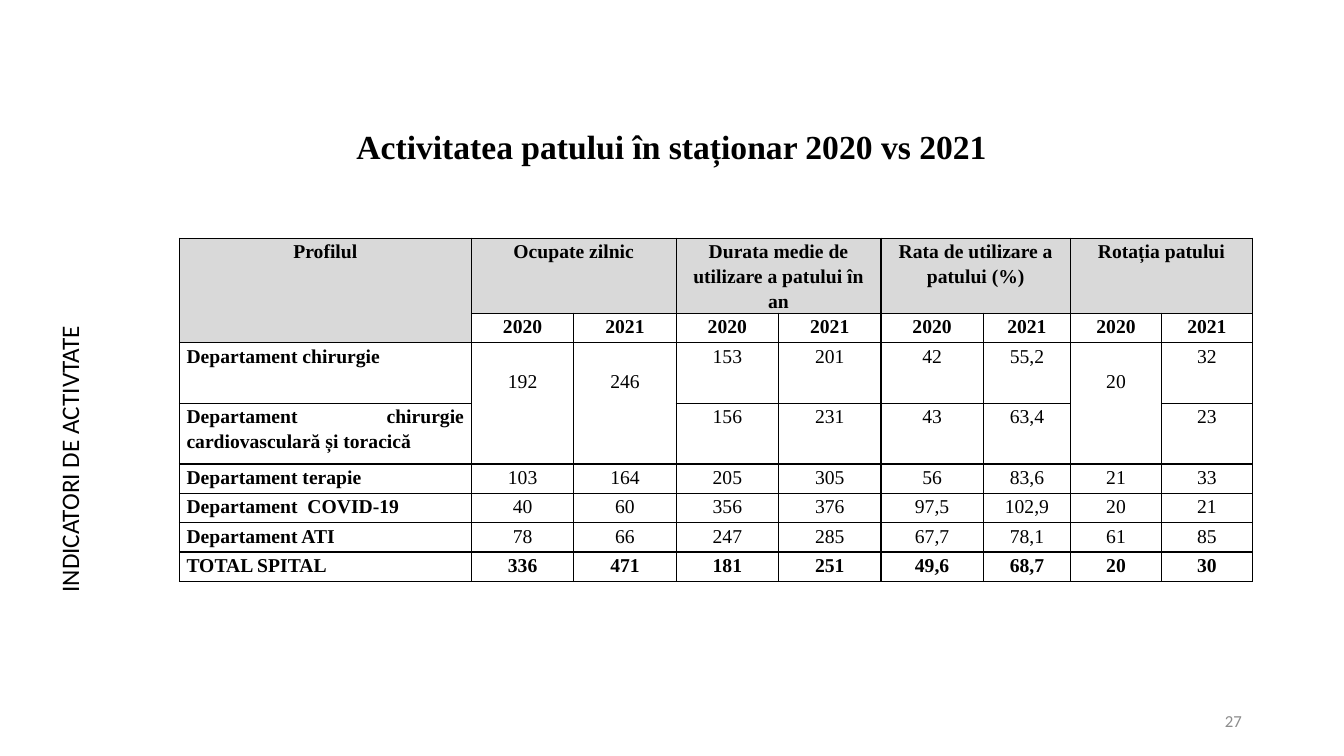
from lxml import etree
from pptx import Presentation
from pptx.dml.color import RGBColor
from pptx.enum.text import MSO_ANCHOR, PP_ALIGN
from pptx.oxml.ns import qn
from pptx.util import Cm, Pt

LEFT, CENTER = PP_ALIGN.LEFT, PP_ALIGN.CENTER
RIGHT, JUSTIFY = PP_ALIGN.RIGHT, PP_ALIGN.JUSTIFY
MIDDLE = MSO_ANCHOR.MIDDLE

SERIF, SANS = "Times New Roman", "Calibri"
BLACK, WHITE, GREY, MUTED = "000000", "FFFFFF", "D9D9D9", "8C8C8C"

WIDTHS = [7.36] + [2.58] * 5 + [2.2, 2.29, 2.29]
HEIGHTS = [1.89, 0.74, 1.53, 1.53] + [0.74] * 4
ROWS = [
    ["Profilul", "Ocupate zilnic", "", "Durata medie de utilizare a patului în an",
     "", "Rata de utilizare a patului (%)", "", "Rotația patului", ""],
    [""] + ["2020", "2021"] * 4,
    ["Departament chirurgie", "192", "246", "153", "201", "42", "55,2", "20", "32"],
    ["Departament chirurgie cardiovasculară și toracică",
     "", "", "156", "231", "43", "63,4", "", "23"],
    ["Departament terapie", "103", "164", "205", "305", "56", "83,6", "21", "33"],
    ["Departament  COVID-19", "40", "60", "356", "376", "97,5", "102,9", "20", "21"],
    ["Departament ATI", "78", "66", "247", "285", "67,7", "78,1", "61", "85"],
    ["TOTAL SPITAL", "336", "471", "181", "251", "49,6", "68,7", "20", "30"],
]
HEAD, YEARS, FIRST, TOTAL = 0, 1, 2, len(ROWS) - 1
SHARED = (1, 2, 7)  # columns where both surgery rows share one value


def paint(target, color):
    target.rgb = RGBColor.from_string(color)


def place(shape, left, top, width, height):
    shape.left, shape.top = Cm(left), Cm(top)
    shape.width, shape.height = Cm(width), Cm(height)


def write(frame, text, size, face, color=BLACK, align=LEFT, bold=False, space=1.0):
    para = frame.paragraphs[0]
    para.text = text
    para.alignment = align
    para.line_spacing = space
    para.font.size = Pt(size)
    para.font.name = face
    para.font.bold = bold
    paint(para.font.color, color)


def add_title(slide, text):
    title = slide.shapes.title
    place(title, 4.72, 1.9, 24.41, 3.68)
    title.text_frame.vertical_anchor = MIDDLE
    write(title.text_frame, text, 24, SERIF, align=CENTER, bold=True, space=0.9)


def add_label(slide, text, box, size, color=BLACK, align=LEFT, turn=0, wrap=True):
    label = slide.shapes.add_textbox(*map(Cm, box))
    label.rotation = turn
    label.text_frame.word_wrap = wrap
    label.text_frame.vertical_anchor = MIDDLE
    write(label.text_frame, text, size, SANS, color, align)


def add_edges(cell):
    props = cell._tc.get_or_add_tcPr()
    for side in ("a:lnL", "a:lnR", "a:lnT", "a:lnB"):
        line = etree.SubElement(props, qn(side), w=str(Pt(1)))
        fill = etree.SubElement(line, qn("a:solidFill"))
        etree.SubElement(fill, qn("a:srgbClr"), val=BLACK)


def fill_cell(cell, text, row, col):
    add_edges(cell)
    cell.fill.solid()
    paint(cell.fill.fore_color, GREY if row == HEAD or (row, col) == (YEARS, 0) else WHITE)
    cell.margin_left = cell.margin_right = Cm(0.18)
    # Shared values sit one line lower
    cell.margin_top = Cm(0.63 if row == FIRST and col in SHARED else 0)
    cell.margin_bottom = 0
    align = JUSTIFY if col == 0 and row >= FIRST else CENTER
    bold = col == 0 or row in (HEAD, YEARS, TOTAL)
    write(cell.text_frame, text, 14, SERIF, align=align, bold=bold, space=1.15)


def add_grid(slide):
    frame = slide.shapes.add_table(
        len(ROWS), len(WIDTHS), Cm(4.52), Cm(6), Cm(sum(WIDTHS)), Cm(sum(HEIGHTS)))
    table = frame.table
    table.first_row = table.horz_banding = False
    for column, width in zip(table.columns, WIDTHS):
        column.width = Cm(width)
    for line, height in zip(table.rows, HEIGHTS):
        line.height = Cm(height)
    for row, texts in enumerate(ROWS):
        for col, text in enumerate(texts):
            fill_cell(table.cell(row, col), text, row, col)

    # Merged headings and shared values
    table.cell(HEAD, 0).merge(table.cell(YEARS, 0))
    for col in range(1, len(WIDTHS), 2):
        table.cell(HEAD, col).merge(table.cell(HEAD, col + 1))
    for col in SHARED:
        table.cell(FIRST, col).merge(table.cell(FIRST + 1, col))


def main():
    deck = Presentation()
    deck.slide_width, deck.slide_height = Cm(33.87), Cm(19.05)
    slide = deck.slides.add_slide(deck.slide_layouts[5])

    add_title(slide, "Activitatea patului în staționar 2020 vs 2021")
    add_grid(slide)

    # Side heading and page number
    add_label(slide, "INDICATORI DE ACTIVTATE", (-1.98, 10.95, 7.44, 1.02), 18,
              turn=270, wrap=False)
    add_label(slide, "27", (23.93, 17.65, 7.62, 1.02), 12, MUTED, RIGHT)
    deck.save("out.pptx")


if __name__ == "__main__":
    main()
